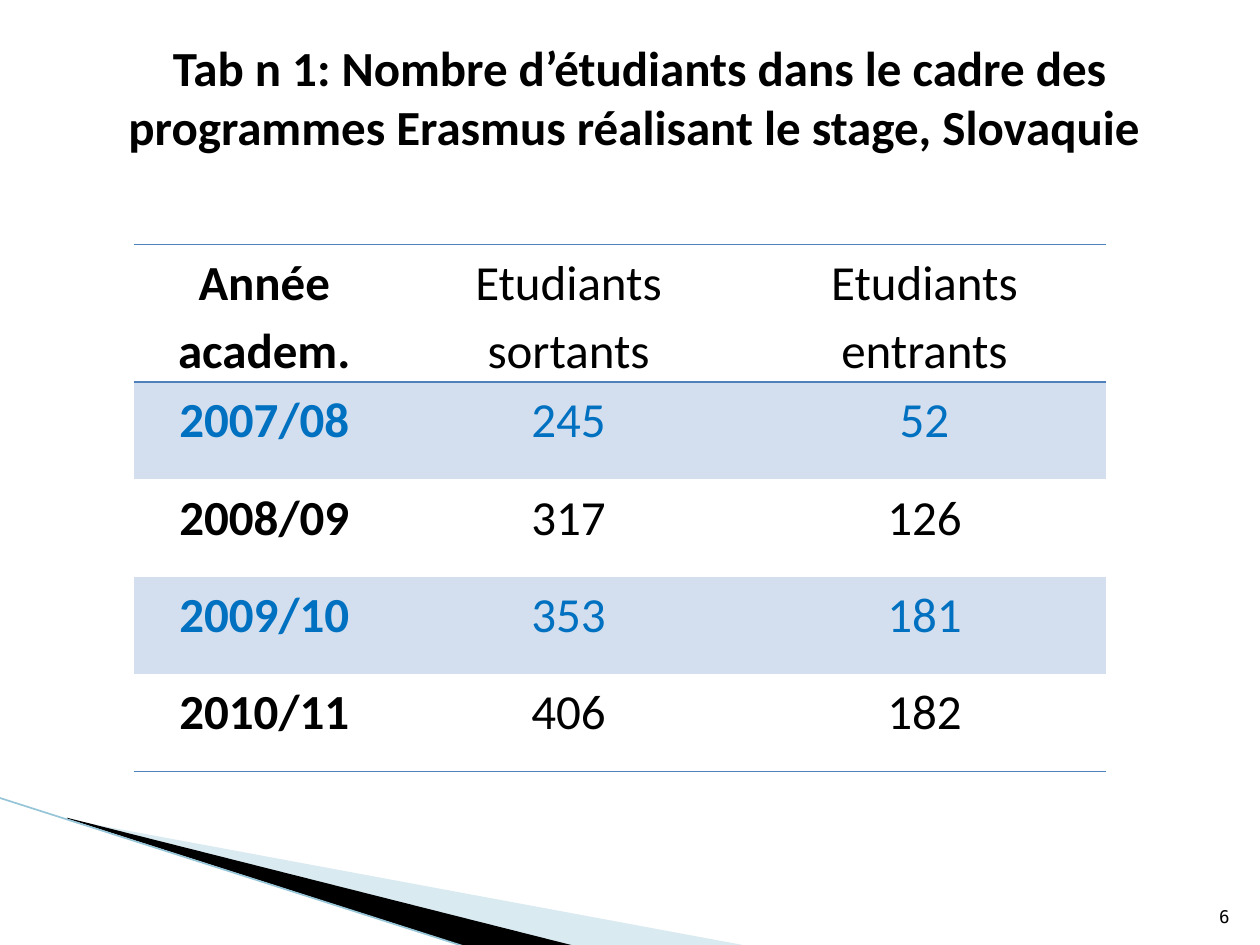
from lxml.etree import SubElement
from pptx import Presentation
from pptx.dml.color import RGBColor
from pptx.enum.text import MSO_ANCHOR, MSO_AUTO_SIZE, PP_ALIGN
from pptx.enum.shapes import MSO_CONNECTOR
from pptx.oxml.ns import qn
from pptx.util import Pt

BLACK, BLUE, BORDER, BAND = "000000", "0070C0", "4F81BD", "D3DFEE"
STUDENTS = [
    ("Année academ.", "Etudiants sortants", "Etudiants entrants"),
    ("2007/08", "245", "52"),
    ("2008/09", "317", "126"),
    ("2009/10", "353", "181"),
    ("2010/11", "406", "182"),
]
COLUMN_WIDTHS = (149, 198.8, 208)
HEADER_HEIGHT, YEAR_HEIGHT = 78.6, 55.6


def rgb(value):
    return RGBColor.from_string(value)


def style_text(frame, size, color=BLACK, bold=False, font="Calibri", align=PP_ALIGN.CENTER):
    for paragraph in frame.paragraphs:
        paragraph.alignment = align
        for run in paragraph.runs:
            run.font.name = font
            run.font.size = Pt(size)
            run.font.bold = bold
            run.font.color.rgb = rgb(color)


def add_wedge(slide, points, color, alpha=None):
    """Fill a closed outline; alpha is its opacity in percent."""
    builder = slide.shapes.build_freeform(Pt(points[0][0]), Pt(points[0][1]), scale=1.0)
    builder.add_line_segments([(Pt(x), Pt(y)) for x, y in points[1:]], close=True)
    wedge = builder.convert_to_shape()
    wedge.shadow.inherit = False
    wedge.line.fill.background()
    wedge.fill.solid()
    wedge.fill.fore_color.rgb = rgb(color)
    if alpha is not None:
        fill_color = wedge.fill._xPr.find(".//" + qn("a:srgbClr"))
        SubElement(fill_color, qn("a:alpha"), val=str(alpha * 1000))


def add_edge_line(slide, start, end, color, width):
    edge = slide.shapes.add_connector(
        MSO_CONNECTOR.STRAIGHT, Pt(start[0]), Pt(start[1]), Pt(end[0]), Pt(end[1]))
    edge.line.color.rgb = rgb(color)
    edge.line.width = Pt(width)
    SubElement(edge._element.spPr, qn("a:effectLst"))


def set_borders(cell, ruled):
    """Rule the sides named in ruled (L, R, T, B) and clear the others."""
    properties = cell._tc.get_or_add_tcPr()
    for side in "LRTB":
        border = SubElement(properties, qn(f"a:ln{side}"), w=str(Pt(1)))
        if side in ruled:
            fill = SubElement(border, qn("a:solidFill"))
            SubElement(fill, qn("a:srgbClr"), val=BORDER)
        else:
            SubElement(border, qn("a:noFill"))


def fill_cell(cell, text, row, column):
    banded = row % 2 == 1
    cell.text_frame.text = text
    cell.margin_left = cell.margin_right = Pt(5)
    cell.margin_top = cell.margin_bottom = 0
    cell.text_frame.paragraphs[0].line_spacing = 1.15
    style_text(cell.text_frame, 28, BLUE if banded else BLACK, bold=column == 0)
    set_borders(cell, {0: "TB", 1: "T", len(STUDENTS) - 1: "B"}.get(row, ""))
    if banded:
        cell.fill.solid()
        cell.fill.fore_color.rgb = rgb(BAND)
    else:
        cell.fill.background()


def add_student_table(slide):
    height = HEADER_HEIGHT + YEAR_HEIGHT * (len(STUDENTS) - 1)
    table = slide.shapes.add_table(
        len(STUDENTS), len(COLUMN_WIDTHS), Pt(76.5), Pt(139.7),
        Pt(sum(COLUMN_WIDTHS)), Pt(height)).table
    table.first_row = table.horz_banding = False
    for column, width in zip(table.columns, COLUMN_WIDTHS):
        column.width = Pt(width)
    for r, values in enumerate(STUDENTS):
        table.rows[r].height = Pt(YEAR_HEIGHT if r else HEADER_HEIGHT)
        for c, text in enumerate(values):
            fill_cell(table.cell(r, c), text, r, c)


def set_title(slide, text):
    title = slide.shapes.title
    title.left, title.top, title.width, title.height = Pt(36.7), Pt(16.6), Pt(657.4), Pt(97.2)
    frame = title.text_frame
    frame.text = text
    frame.word_wrap = True
    frame.auto_size = MSO_AUTO_SIZE.NONE
    frame.vertical_anchor = MSO_ANCHOR.TOP
    frame.margin_top = Pt(5)
    style_text(frame, 28, bold=True)


def add_page_number(slide, number):
    frame = slide.shapes.add_textbox(Pt(681), Pt(504.7), Pt(28.8), Pt(28.8)).text_frame
    frame.text = number
    frame.word_wrap = True
    frame.vertical_anchor = MSO_ANCHOR.BOTTOM
    style_text(frame, 10, font="DejaVu Sans Mono", align=PP_ALIGN.RIGHT)


def main():
    deck = Presentation()
    deck.slide_width, deck.slide_height = Pt(720), Pt(540)
    slide = deck.slides.add_slide(deck.slide_layouts[5])
    add_wedge(slide, [(39.6, 468.5), (428.4, 540.7), (328.3, 540.7), (39.6, 468)], "A0CBDC", 40)
    add_wedge(slide, [(38.2, 467.3), (329, 540.7), (267.8, 541.4), (38.9, 468)], BLACK)
    add_edge_line(slide, (-0.7, 455.8), (267.1, 541.4), "97C5D8", 0.95)
    add_student_table(slide)
    set_title(slide, "Tab n 1: Nombre d’étudiants dans le cadre des "
                     "programmes Erasmus réalisant le stage, Slovaquie ")
    add_page_number(slide, "6")
    deck.save("out.pptx")


if __name__ == "__main__":
    main()
